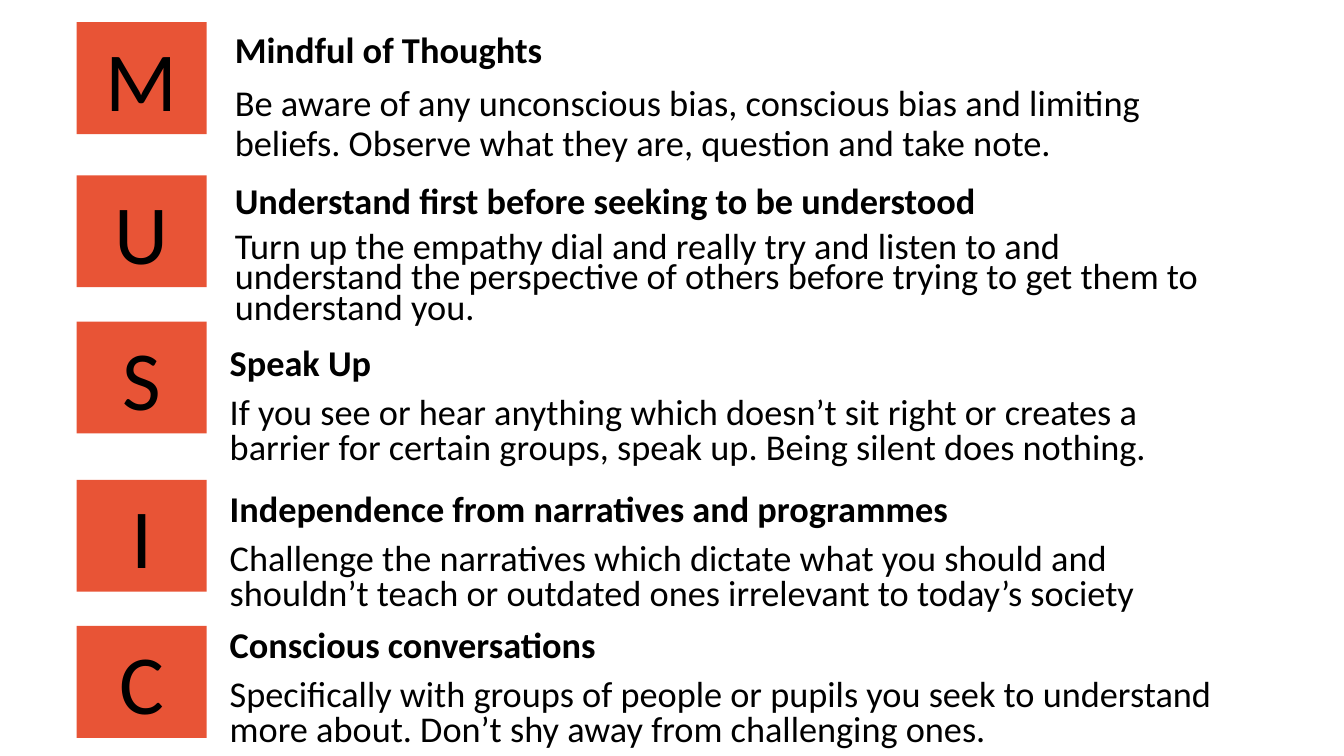
"""Build the MUSIC acronym slide: five lettered tiles, each with a heading and advice."""
from pptx import Presentation
from pptx.dml.color import RGBColor
from pptx.enum.shapes import MSO_SHAPE
from pptx.enum.text import MSO_ANCHOR, MSO_AUTO_SIZE, PP_ALIGN
from pptx.util import Inches, Pt

COLORS = {"tile": "E85436", "text": "000000"}
FONT = "Calibri"

# letter, tile top, text left, text top, text height, size, line spacing, heading, advice
ROWS = [
    ("M", 0.22, 2.23, 0.27, 1.57, 26, 0.9, "Mindful of Thoughts",
     "Be aware of any unconscious bias, conscious bias and limiting beliefs. "
     "Observe what they are, question and take note."),
    ("U", 1.74, 2.23, 1.84, 1.57, 25.9, 0.7, "Understand first before seeking to be understood",
     "Turn up the empathy dial and really try and listen to and understand the "
     "perspective of others before trying to get them to understand you."),
    ("S", 3.19, 2.18, 3.41, 1.35, 25.9, 0.8, "Speak Up",
     "If you see or hear anything which doesn’t sit right or creates a barrier "
     "for certain groups, speak up. Being silent does nothing."),
    ("I", 4.76, 2.18, 4.86, 1.35, 25.9, 0.8, "Independence from narratives and programmes",
     "Challenge the narratives which dictate what you should and shouldn’t teach "
     "or outdated ones irrelevant to today’s society"),
    ("C", 6.21, 2.18, 6.21, 1.35, 25.9, 0.8, "Conscious conversations",
     "Specifically with groups of people or pupils you seek to understand more about. "
     "Don’t shy away from challenging ones."),
]


def write(p, text, size, bold=False):
    p.text = text
    font = p.runs[0].font
    font.name = FONT
    font.size = Pt(size)
    font.bold = bold
    font.color.rgb = RGBColor.from_string(COLORS["text"])


prs = Presentation()
prs.slide_width = Inches(13.33)
prs.slide_height = Inches(7.5)
s = prs.slides.add_slide(prs.slide_layouts[6])

for letter, tile_top, left, top, height, size, spacing, heading, advice in ROWS:
    row = s.shapes.add_group_shape()

    tile = row.shapes.add_shape(
        MSO_SHAPE.RECTANGLE, Inches(0.76), Inches(tile_top), Inches(1.29), Inches(1.11))
    tile.shadow.inherit = False
    tile.fill.solid()
    tile.fill.fore_color.rgb = RGBColor.from_string(COLORS["tile"])
    tile.line.fill.background()
    tf = tile.text_frame
    tf.word_wrap = True
    tf.auto_size = MSO_AUTO_SIZE.SHAPE_TO_FIT_TEXT
    tf.vertical_anchor = MSO_ANCHOR.TOP
    p = tf.paragraphs[0]
    write(p, letter, 60)
    p.alignment = PP_ALIGN.CENTER

    box = row.shapes.add_textbox(Inches(left), Inches(top), Inches(10.02), Inches(height))
    tf = box.text_frame
    tf.word_wrap = True
    write(tf.paragraphs[0], heading, size, bold=True)
    write(tf.add_paragraph(), advice, size)
    for p in tf.paragraphs:
        p.line_spacing = spacing
        p.space_before = Pt(10)

prs.save("out.pptx")
